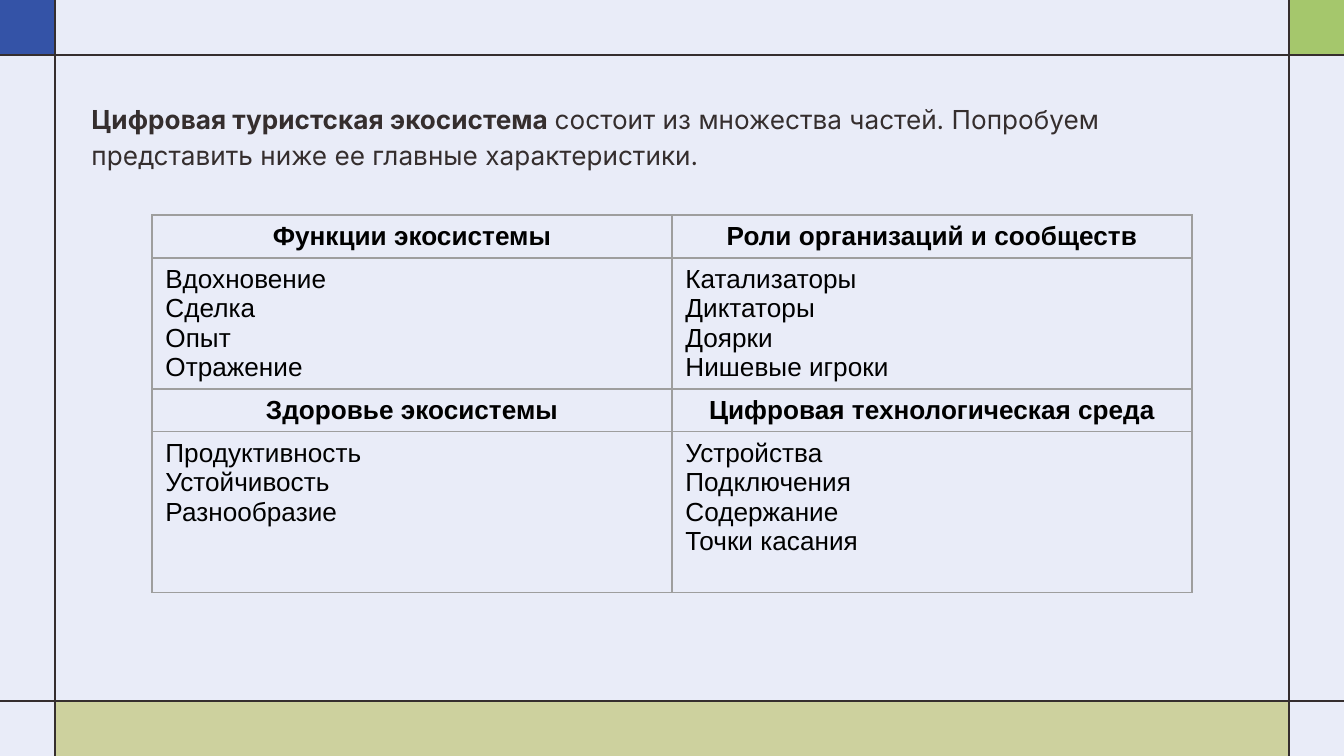
from lxml.etree import SubElement
from pptx import Presentation
from pptx.dml.color import RGBColor
from pptx.enum.shapes import MSO_CONNECTOR, MSO_SHAPE
from pptx.enum.text import MSO_ANCHOR, MSO_AUTO_SIZE, PP_ALIGN
from pptx.oxml.ns import qn
from pptx.util import Emu, Pt

EMU_PER_PX = 914400 / 134.4
WIDTH, HEIGHT = 1344, 756
LEFT, RIGHT, TOP, BOTTOM = 55, 1289, 55, 701
COLORS = {
    "background": "E9ECF8",
    "blue": "3453A7",
    "green": "A5C76C",
    "olive": "CDD19E",
    "ink": "352E2E",
    "black": "000000",
    "border": "9E9E9E",
}


def px(value):
    return Emu(round(value * EMU_PER_PX))


def rgb(name):
    return RGBColor.from_string(COLORS[name])


class SlideBuilder:
    def __init__(self, page):
        self.page = page
        self.shapes = page.shapes
        self.text_size = Pt(14)
        self.line_width = Pt(0.75)
        page.background.fill.solid()
        page.background.fill.fore_color.rgb = rgb("background")

    def style_font(self, font, name, color, bold=None):
        font.name = name
        font.size = self.text_size
        font.color.rgb = rgb(color)
        font.bold = bold

    def block(self, left, top, right, bottom, color):
        box = self.shapes.add_shape(MSO_SHAPE.RECTANGLE, px(left), px(top),
                                    px(right - left), px(bottom - top))
        box.shadow.inherit = False
        box.fill.solid()
        box.fill.fore_color.rgb = rgb(color)
        box.line.fill.background()

    def line(self, x1, y1, x2, y2):
        rule = self.shapes.add_connector(MSO_CONNECTOR.STRAIGHT,
                                         px(x1), px(y1), px(x2), px(y2))
        rule.line.color.rgb = rgb("ink")
        rule.line.width = self.line_width
        SubElement(rule._element.spPr, qn("a:effectLst"))

    def body(self, left, top, width, height, spans):
        box = self.page.placeholders[1]
        box.left, box.top = px(left), px(top)
        box.width, box.height = px(width), px(height)
        frame = box.text_frame
        frame.word_wrap = True
        frame.auto_size = MSO_AUTO_SIZE.NONE
        frame.vertical_anchor = MSO_ANCHOR.TOP
        frame.margin_left = frame.margin_right = Pt(7.2)
        frame.margin_top = frame.margin_bottom = Pt(7.2)
        para = frame.paragraphs[0]
        para.line_spacing = 1.15
        para.space_before, para.space_after = Pt(0), Pt(12)
        self.style_font(para.font, "Inter", "ink")
        properties = para._p.get_or_add_pPr()
        properties.set("marL", "0")
        properties.set("indent", "0")
        properties.insert_element_before(
            properties.makeelement(qn("a:buNone"), {}),
            "a:tabLst", "a:defRPr", "a:extLst")
        for text, bold in spans:
            span = para.add_run()
            span.text = text
            self.style_font(span.font, "Inter", "ink", bold)

    def cell_borders(self, cell):
        properties = cell._tc.get_or_add_tcPr()
        for side in ("lnL", "lnR", "lnT", "lnB"):
            border = SubElement(properties, qn(f"a:{side}"), w=str(self.line_width))
            fill = SubElement(border, qn("a:solidFill"))
            SubElement(fill, qn("a:srgbClr"), val=COLORS["border"])

    def table(self, left, top, column_width, row_heights, rows):
        columns = len(rows[0])
        grid = self.shapes.add_table(
            len(rows), columns, px(left), px(top),
            px(column_width * columns), px(sum(row_heights))).table
        grid.first_row = grid.horz_banding = False
        for column in grid.columns:
            column.width = px(column_width)
        for row_index, (height, texts) in enumerate(zip(row_heights, rows)):
            grid.rows[row_index].height = px(height)
            heading = row_index % 2 == 0
            for column_index, text in enumerate(texts):
                cell = grid.cell(row_index, column_index)
                self.cell_borders(cell)
                cell.fill.background()
                cell.text = text
                for para in cell.text_frame.paragraphs:
                    para.alignment = PP_ALIGN.CENTER if heading else PP_ALIGN.LEFT
                    self.style_font(para.font, "Arial", "black", heading)


def main():
    deck = Presentation()
    deck.slide_width, deck.slide_height = px(WIDTH), px(HEIGHT)
    page = deck.slides.add_slide(deck.slide_layouts[1])
    title = page.shapes.title._element
    title.getparent().remove(title)
    builder = SlideBuilder(page)

    # Coloured corners and footer band
    builder.block(0, 0, LEFT, TOP, "blue")
    builder.block(RIGHT, 0, WIDTH, TOP, "green")
    builder.block(LEFT, BOTTOM, RIGHT, HEIGHT, "olive")

    # Frame lines across the whole slide
    for x in (LEFT, RIGHT):
        builder.line(x, 0, x, HEIGHT)
    for y in (TOP, BOTTOM):
        builder.line(0, y, WIDTH, y)

    # Introduction
    builder.body(78, 85, 1188, 597, [
        ("Цифровая туристская экосистема ", True),
        ("состоит из множества частей. Попробуем представить "
         "ниже ее главные характеристики.", False),
    ])

    # Ecosystem characteristics: heading rows alternate with lists
    builder.table(152, 215, 520, [43, 131, 43, 161], [
        ("Функции экосистемы", "Роли организаций и сообществ"),
        ("Вдохновение\nСделка\nОпыт\nОтражение",
         "Катализаторы\nДиктаторы\nДоярки\nНишевые игроки"),
        ("Здоровье экосистемы", "Цифровая технологическая среда"),
        ("Продуктивность\nУстойчивость\nРазнообразие",
         "Устройства\nПодключения\nСодержание\nТочки касания"),
    ])

    deck.save("out.pptx")


if __name__ == "__main__":
    main()
